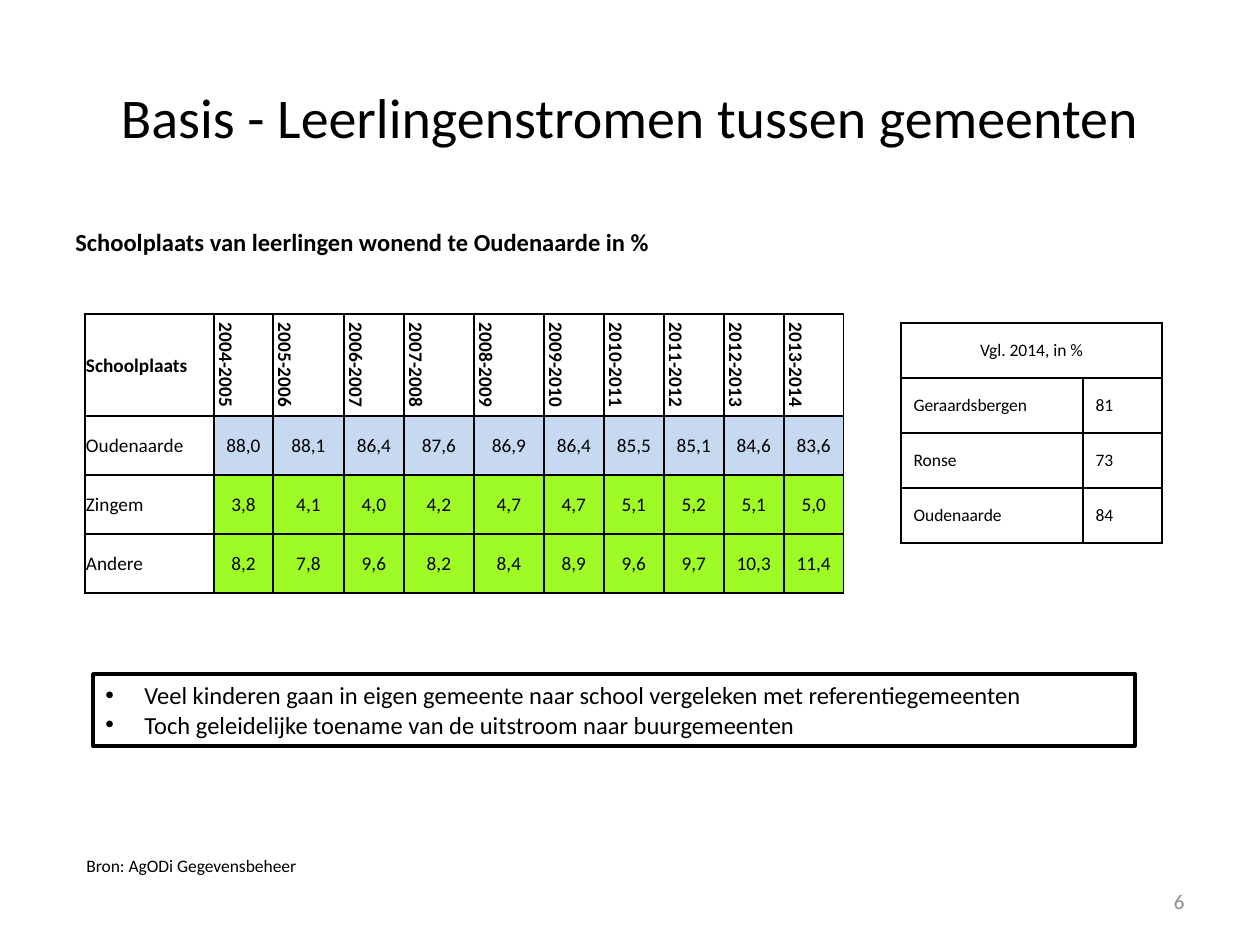
from lxml import etree
from pptx import Presentation
from pptx.dml.color import RGBColor
from pptx.enum.shapes import MSO_SHAPE
from pptx.enum.text import MSO_ANCHOR, PP_ALIGN
from pptx.oxml.ns import qn
from pptx.util import Pt

LEFT, CENTER, RIGHT = PP_ALIGN.LEFT, PP_ALIGN.CENTER, PP_ALIGN.RIGHT
TOP, MIDDLE = MSO_ANCHOR.TOP, MSO_ANCHOR.MIDDLE
RECTANGLE = MSO_SHAPE.RECTANGLE

EMU_PER_PX = 914400 / 126
FONT = "Calibri"
COLORS = {
    "ink": "000000",
    "paper": "FFFFFF",
    "own_town": "C6D9F1",
    "other_town": "9FFB25",
    "page_number": "8C8C8C",
}

SCHOOL_YEARS = [f"{year}-{year + 1}" for year in range(2004, 2014)]
SCHOOL_PLACES = [
    ("Oudenaarde", "own_town", "88,0 88,1 86,4 87,6 86,9 86,4 85,5 85,1 84,6 83,6"),
    ("Zingem", "other_town", "3,8 4,1 4,0 4,2 4,7 4,7 5,1 5,2 5,1 5,0"),
    ("Andere", "other_town", "8,2 7,8 9,6 8,2 8,4 8,9 9,6 9,7 10,3 11,4"),
]
FLOW_COLUMNS = [129, 59, 71, 60, 70, 70] + [60] * 5
FLOW_ROWS = [102, 59, 59, 59]
FIRST_PADDED_COLUMN = 7
COMPARISON = [("Geraardsbergen", "81"), ("Ronse", "73"), ("Oudenaarde", "84")]
CONCLUSIONS = [
    "Veel kinderen gaan in eigen gemeente naar school vergeleken met referentiegemeenten",
    "Toch geleidelijke toename van de uitstroom naar buurgemeenten",
]


def px(length):
    return round(length * EMU_PER_PX)


def rgb(color):
    return RGBColor.from_string(COLORS[color])


def format_text(frame, size, color="ink", bold=False, align=LEFT):
    for paragraph in frame.paragraphs:
        paragraph.alignment = align
        for run in paragraph.runs:
            run.font.name = FONT
            run.font.size = Pt(size)
            run.font.bold = bold
            run.font.color.rgb = rgb(color)


def add_text(slide, box, text, size, anchor=TOP, wrap=True, **style):
    frame = slide.shapes.add_textbox(*map(px, box)).text_frame
    frame.word_wrap = wrap
    frame.vertical_anchor = anchor
    frame.text = text
    format_text(frame, size, **style)


def add_grid(slide, left, top, columns, rows):
    """Add a table with the given column widths and row heights."""
    frame = slide.shapes.add_table(len(rows), len(columns), px(left), px(top),
                                   px(sum(columns)), px(sum(rows)))
    table = frame.table
    for column, width in zip(table.columns, columns):
        column.width = px(width)
    for row, height in zip(table.rows, rows):
        row.height = px(height)
    return table


def add_borders(cell):
    properties = cell._tc.get_or_add_tcPr()
    for side in ("lnL", "lnR", "lnT", "lnB"):
        line = etree.SubElement(properties, qn(f"a:{side}"), w=str(Pt(1)))
        fill = etree.SubElement(line, qn("a:solidFill"))
        etree.SubElement(fill, qn("a:srgbClr"), val=COLORS["ink"])


def fill_cell(cell, text, size, fill="paper", tight=False, **style):
    """Write and format a cell; tight reduces its margins to one px."""
    add_borders(cell)
    cell.fill.solid()
    cell.fill.fore_color.rgb = rgb(fill)
    cell.vertical_anchor = MIDDLE
    if tight:
        cell.margin_left = cell.margin_right = cell.margin_top = px(1)
        cell.margin_bottom = 0
    cell.text_frame.text = text
    format_text(cell.text_frame, size, **style)


def add_flow_table(slide, left, top):
    table = add_grid(slide, left, top, FLOW_COLUMNS, FLOW_ROWS)
    fill_cell(table.cell(0, 0), "Schoolplaats", 11, tight=True, bold=True)
    for column, school_year in enumerate(SCHOOL_YEARS, 1):
        cell = table.cell(0, column)
        fill_cell(cell, school_year, 11, tight=True, bold=True, align=CENTER)
        cell._tc.tcPr.set("vert", "vert")
    for row, (place, color, shares) in enumerate(SCHOOL_PLACES, 1):
        fill_cell(table.cell(row, 0), place, 11, tight=True)
        for column, share in enumerate(shares.split(), 1):
            fill_cell(table.cell(row, column), share, 11, fill=color,
                      tight=column < FIRST_PADDED_COLUMN, align=CENTER)


def add_comparison_table(slide, left, top):
    table = add_grid(slide, left, top, [182, 79], [55] * 4)
    heading = table.cell(0, 0)
    heading.merge(table.cell(0, 1))
    fill_cell(heading, "Vgl. 2014, in %", 10, align=CENTER)
    fill_cell(table.cell(0, 1), "", 10)
    for row, values in enumerate(COMPARISON, 1):
        for column, value in enumerate(values):
            fill_cell(table.cell(row, column), value, 10)


def add_conclusions(slide, box):
    panel = slide.shapes.add_shape(RECTANGLE, *map(px, box))
    panel.shadow.inherit = False
    panel.fill.solid()
    panel.fill.fore_color.rgb = rgb("paper")
    panel.line.color.rgb = rgb("ink")
    panel.line.width = Pt(2)
    frame = panel.text_frame
    frame.word_wrap = True
    frame.vertical_anchor = TOP
    frame.text = "\n".join(CONCLUSIONS)
    format_text(frame, 14)
    for paragraph in frame.paragraphs:
        properties = paragraph._p.get_or_add_pPr()
        properties.set("marL", str(px(39)))
        properties.set("indent", str(px(-39)))
        etree.SubElement(properties, qn("a:buFont"), typeface="Arial")
        etree.SubElement(properties, qn("a:buChar"), char="•")


def main():
    presentation = Presentation()
    presentation.slide_width = px(1260)
    presentation.slide_height = px(945)
    slide = presentation.slides.add_slide(presentation.slide_layouts[6])

    add_text(slide, (63, 38, 1134, 157), "Basis - Leerlingenstromen tussen gemeenten",
             32, anchor=MIDDLE, align=CENTER)
    add_text(slide, (63, 221, 1134, 624),
             "Schoolplaats van leerlingen wonend te Oudenaarde in %", 14, bold=True)
    add_flow_table(slide, 85, 314)
    add_conclusions(slide, (93, 674, 1042, 72))
    add_text(slide, (74, 849, 263, 72), "Bron: AgODi Gegevensbeheer", 10, wrap=False)
    add_comparison_table(slide, 901, 323)
    add_text(slide, (903, 876, 294, 50), "6", 12, anchor=MIDDLE,
             color="page_number", align=RIGHT)

    presentation.save("out.pptx")


if __name__ == "__main__":
    main()
